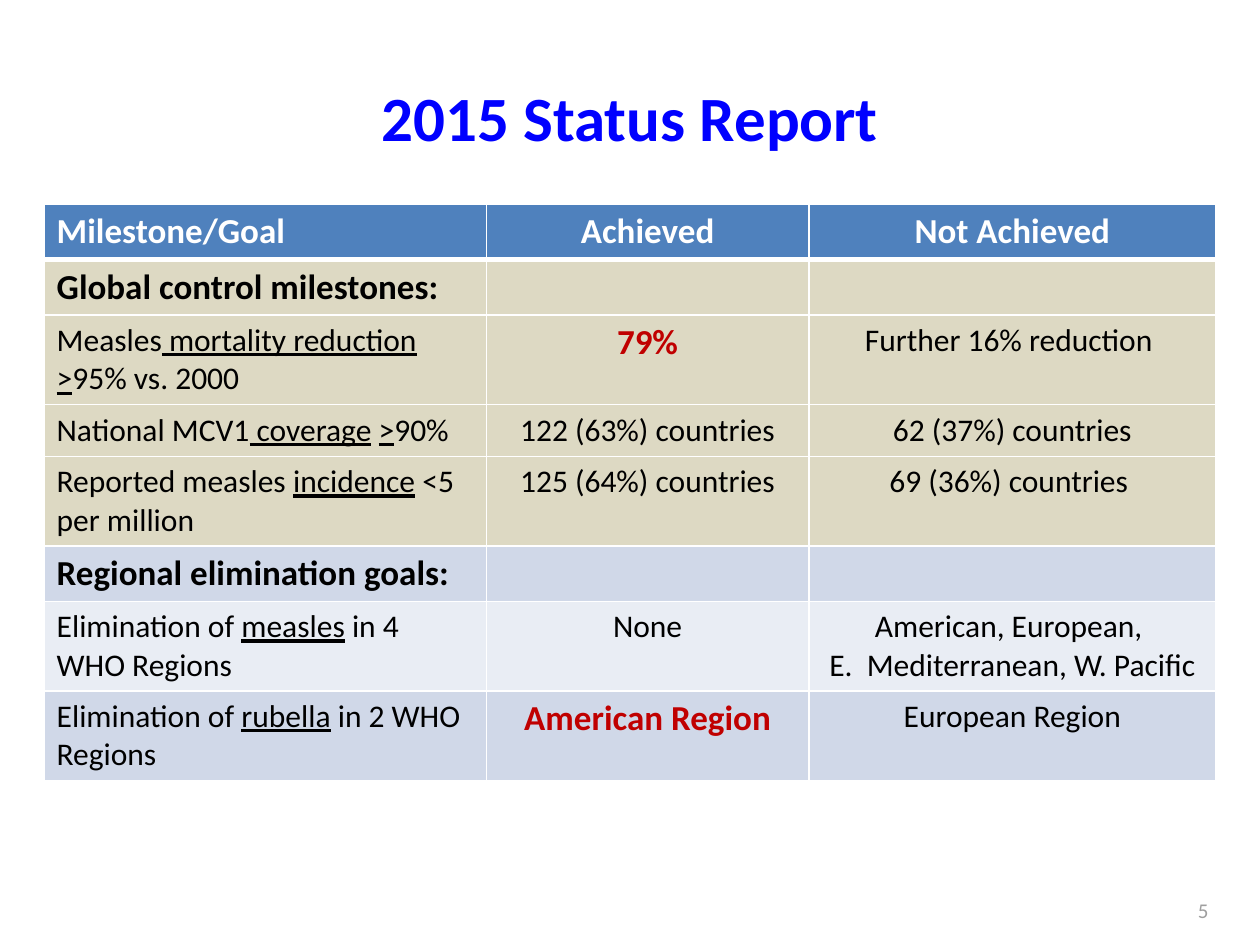
import pptx
import pptx.util
import pptx.dml.color
import pptx.enum.text
import pptx.oxml
import pptx.oxml.ns

Inches = pptx.util.Inches
Pt = pptx.util.Pt
RGBColor = pptx.dml.color.RGBColor
PP_ALIGN = pptx.enum.text.PP_ALIGN
MSO_ANCHOR = pptx.enum.text.MSO_ANCHOR

WHITE = RGBColor(0xFF, 0xFF, 0xFF)
BLACK = RGBColor(0, 0, 0)
TITLE_BLUE = RGBColor(0, 0, 0xFF)
HEADER_BLUE = RGBColor(0x4F, 0x81, 0xBD)
TAN = RGBColor(0xDD, 0xD9, 0xC3)
BAND_DARK = RGBColor(0xD0, 0xD8, 0xE8)
BAND_LIGHT = RGBColor(0xE9, 0xED, 0xF4)
RED = RGBColor(0xC0, 0, 0)
GREY = RGBColor(0x9F, 0x9F, 0x9F)

BODY = (18, BLACK, False)
HEADER = (20, WHITE, True)
SECTION = (20, BLACK, True)
RESULT = (20, RED, True)

ROWS = [
    (HEADER_BLUE, [("Milestone/Goal", HEADER), ("Achieved", HEADER), ("Not Achieved", HEADER)]),
    (TAN, [("Global control milestones:", SECTION), ("", BODY), ("", BODY)]),
    (TAN, [("Measles_ mortality reduction_ _>_95% vs. 2000", BODY), ("79%", RESULT),
           ("Further 16% reduction ", BODY)]),
    (TAN, [("National MCV1_ coverage_ _>_90%", BODY), ("122 (63%) countries", BODY),
           ("62 (37%) countries", BODY)]),
    (TAN, [("Reported measles _incidence_ <5 per million", BODY), ("125 (64%) countries", BODY),
           ("69 (36%) countries ", BODY)]),
    (BAND_DARK, [("Regional elimination goals:", SECTION), ("", BODY), ("", BODY)]),
    (BAND_LIGHT, [("Elimination of _measles_ in 4 WHO Regions", BODY), ("None", BODY),
                  ("American, European, \nE.  Mediterranean, W. Pacific", BODY)]),
    (BAND_DARK, [("Elimination of _rubella_ in 2 WHO Regions", BODY), ("American Region", RESULT),
                 ("European Region", BODY)]),
]


class StatusSlide:
    font = "Calibri"

    def __init__(self, prs):
        self.s = prs.slides.add_slide(prs.slide_layouts[5])

    def add_text(self, tf, text, style, align):
        size, color, bold = style
        for i, line in enumerate(text.split("\n")):
            p = tf.paragraphs[0] if i == 0 else tf.add_paragraph()
            p.alignment = align
            p.font.size = Pt(size)
            for j, part in enumerate(line.split("_")):
                if not part:
                    continue
                r = p.add_run()
                r.text = part
                r.font.name = self.font
                r.font.size = Pt(size)
                r.font.bold = bold
                r.font.color.rgb = color
                if j % 2:
                    r.font.underline = True

    def title(self, text, left, top, width, height):
        sp = self.s.shapes.title
        sp.left, sp.top, sp.width, sp.height = map(Inches, (left, top, width, height))
        sp.text_frame.vertical_anchor = MSO_ANCHOR.MIDDLE
        self.add_text(sp.text_frame, text, (36, TITLE_BLUE, True), PP_ALIGN.CENTER)

    def label(self, text, left, top, width, height):
        sp = self.s.shapes.add_textbox(*map(Inches, (left, top, width, height)))
        tf = sp.text_frame
        tf.word_wrap = True
        tf.vertical_anchor = MSO_ANCHOR.MIDDLE
        self.add_text(tf, text, (12, GREY, False), PP_ALIGN.RIGHT)

    def borders(self, cell, bottom):
        tcPr = cell._tc.get_or_add_tcPr()
        widths = {"lnL": 1, "lnR": 1, "lnT": 1, "lnB": bottom}
        for i, (side, width) in enumerate(widths.items()):
            ln = pptx.oxml.parse_xml(
                f'<a:{side} {pptx.oxml.ns.nsdecls("a")} w="{Pt(width)}"><a:solidFill>'
                f'<a:srgbClr val="{WHITE}"/></a:solidFill></a:{side}>')
            tcPr.insert(i, ln)

    def table(self, rows, col_widths, row_height, left, top, height):
        frame = self.s.shapes.add_table(
            len(rows), len(col_widths), Inches(left), Inches(top),
            Inches(sum(col_widths)), Inches(height))
        tbl = frame.table
        for col, width in zip(tbl.columns, col_widths):
            col.width = Inches(width)
        for i, (fill, cells) in enumerate(rows):
            tbl.rows[i].height = Inches(row_height)
            for j, (text, style) in enumerate(cells):
                cell = tbl.cell(i, j)
                cell.fill.solid()
                cell.fill.fore_color.rgb = fill
                self.borders(cell, 3 if i == 0 else 1)
                align = PP_ALIGN.CENTER if j else PP_ALIGN.LEFT
                self.add_text(cell.text_frame, text, style, align)
        frame.height = Inches(height)


def main():
    prs = pptx.Presentation()
    prs.slide_width, prs.slide_height = Inches(10), Inches(7.5)
    slide = StatusSlide(prs)
    slide.title("2015 Status Report", 0.5, 0.3, 9, 1.25)
    slide.table(ROWS, [3.51, 2.56, 3.23], 0.41, 0.35, 1.62, 4.51)
    slide.label("5", 7.36, 7.02, 2.33, 0.4)
    prs.save("out.pptx")


if __name__ == "__main__":
    main()
